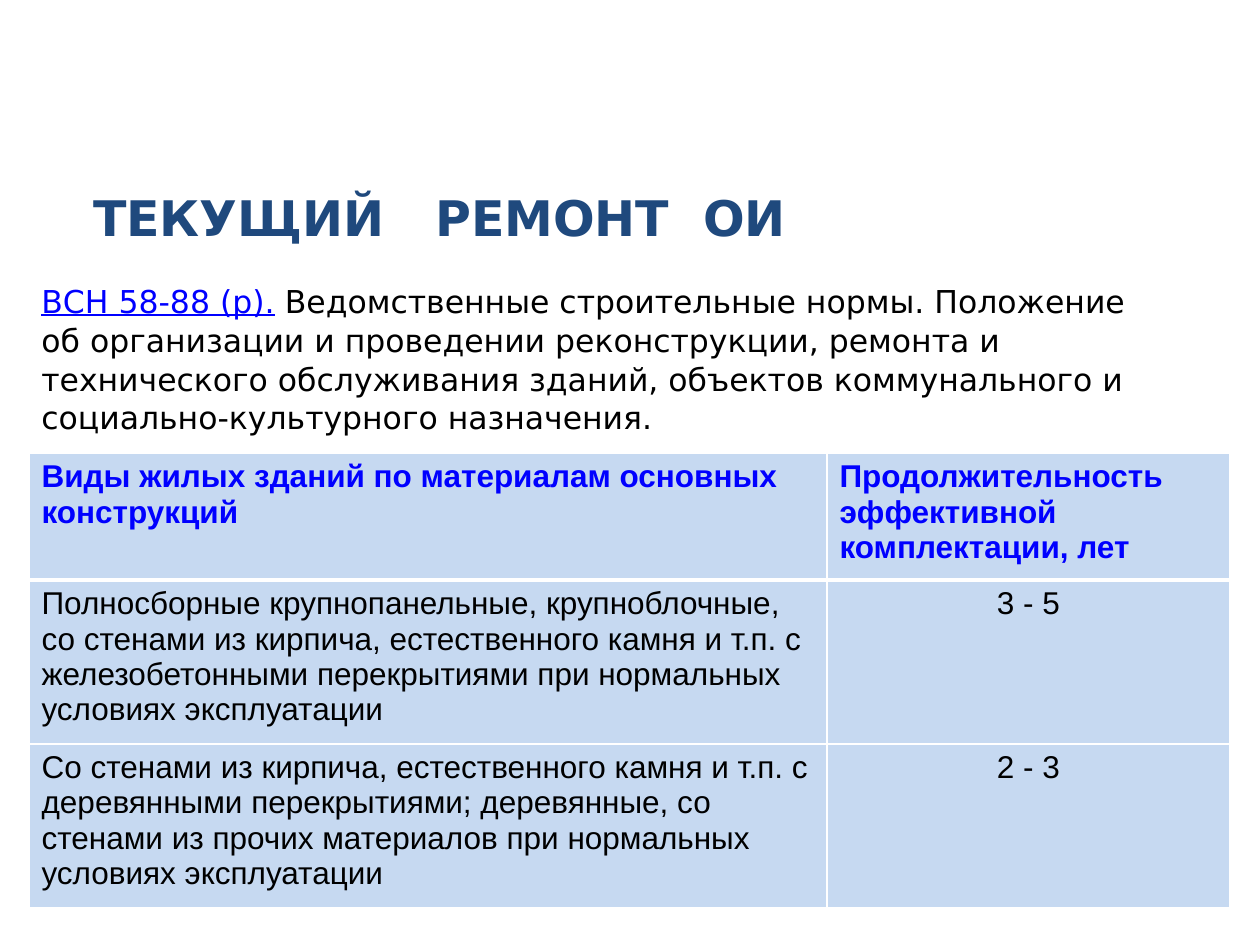
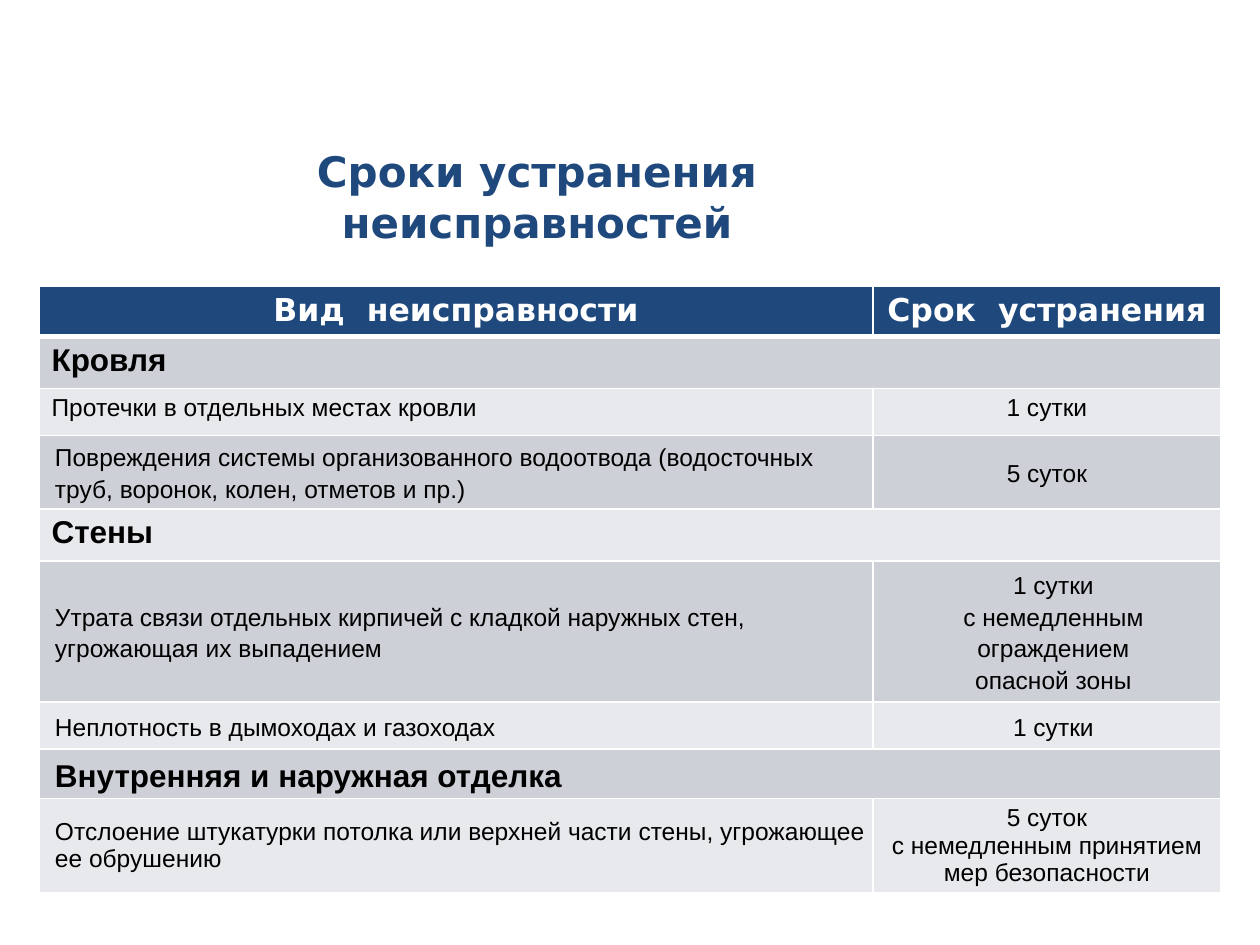
"""Build two slides on building repair: service periods and repair terms."""
from dataclasses import dataclass

from lxml import etree
from pptx import Presentation
from pptx import util as u
from pptx.dml.color import RGBColor
from pptx.enum import text
from pptx.oxml import ns


@dataclass(frozen=True)
class Theme:
    """Hold the colours, fonts and type sizes of the deck."""
    navy: str = "1F497D"
    link: str = "0000FF"
    ink: str = "000000"
    white: str = "FFFFFF"
    sky: str = "C6D9F1"
    dark: str = "CDD0D7"
    light: str = "E8E9EC"
    head: str = "DejaVu Sans"
    sans: str = "Arial"
    big: int = 28
    title: int = 24
    body: int = 18
    small: int = 14


T = Theme()
MID = text.PP_ALIGN.CENTER
LEFT = text.PP_ALIGN.LEFT
MIDDLE = text.MSO_ANCHOR.MIDDLE
TOP = text.MSO_ANCHOR.TOP


def px(n):
    """Turn px into EMU at 126 px to the inch."""
    return u.Emu(round(n * 914400 / 126))


def put(obj, fmt):
    """Set each value of a format dict on an object."""
    for key, val in fmt.items():
        setattr(obj, key, val)


def look(name, size, color, bold=False, **more):
    """Describe a type style as a dict."""
    return dict(name=name, size=u.Pt(size), color=color, bold=bold, **more)


def write(para, runs, style, align=LEFT, left=0, first=0, **fmt):
    """Fill a paragraph with runs, each a string or a (string, changes) pair."""
    props = para._p.get_or_add_pPr()
    props.set("marL", str(px(left)))
    props.set("indent", str(px(first)))
    put(para, dict(alignment=align, **fmt))
    for item in runs:
        words, change = (item, {}) if isinstance(item, str) else item
        full = {**style, **change}
        color, gap = full.pop("color"), full.pop("gap", None)
        run = para.add_run()
        run.text = words
        put(run.font, full)
        run.font.color.rgb = RGBColor.from_string(color)
        if gap:
            run._r.get_or_add_rPr().set("spc", str(gap))


def fill(frame, lines, style, **fmt):
    """Write one paragraph for each list of runs."""
    for i, runs in enumerate(lines):
        para = frame.add_paragraph() if i else frame.paragraphs[0]
        write(para, runs, style, **fmt)


def box(slide, area, lines, style, anchor=TOP, **fmt):
    """Add a wrapped text box."""
    frame = slide.shapes.add_textbox(*map(px, area)).text_frame
    put(frame, dict(word_wrap=True, vertical_anchor=anchor))
    fill(frame, lines, style, **fmt)


def title(slide, area, runs, size):
    """Add a centred slide title."""
    box(slide, area, [runs], look(T.head, size, T.navy, True), MIDDLE, align=MID)


def edge(cell, widths):
    """Draw white cell borders of the given widths in points."""
    props = cell._tc.get_or_add_tcPr()
    for side, wide in widths.items():
        line = etree.SubElement(props, ns.qn("a:ln" + side), w=str(u.Pt(wide)))
        paint = etree.SubElement(line, ns.qn("a:solidFill"))
        etree.SubElement(paint, ns.qn("a:srgbClr"), val=T.white)


def grid(slide, left, top, cols, rows, fills):
    """Add a table with white rules and one fill for each row."""
    area = map(px, (left, top, sum(cols), sum(rows)))
    table = slide.shapes.add_table(len(rows), len(cols), *area).table
    put(table, dict(first_row=False, horz_banding=False))
    for col, wide in zip(table.columns, cols):
        col.width = px(wide)
    for i, (row, high) in enumerate(zip(table.rows, rows)):
        row.height = px(high)
        for cell in row.cells:
            edge(cell, dict(L=1, R=1, T=3 if i == 1 else 1, B=1 if i else 3))
            cell.fill.solid()
            cell.fill.fore_color.rgb = RGBColor.from_string(fills[i])
    return table


def tight(cell):
    """Centre a cell's text upright and narrow its margins."""
    sides = ("left", "right", "top", "bottom")
    put(cell, {f"margin_{side}": px(3) for side in sides})
    cell.vertical_anchor = MIDDLE


def repair(slide):
    """Draw the slide on current repair."""
    title(slide, (63, 168, 753, 98),
          ["ТЕКУЩИЙ", (" ", {"gap": 1950}), "РЕМОНТ", (" ", {"gap": 975}), "ОИ"], T.big)
    link = ("ВСН 58-88 (р).", {"color": T.link, "underline": True})
    box(slide, (29, 276, 1134, 606), [
        [link, " Ведомственные строительные нормы. Положение"],
        ["об организации и проведении реконструкции, ремонта и"],
        ["технического обслуживания зданий, объектов коммунального и"],
        ["социально-культурного назначения."],
    ], look(T.head, T.body, T.ink), left=48, first=-48, space_after=u.Pt(0.5))
    rows = [
        ("Виды жилых зданий по материалам основных конструкций",
         "Продолжительность эффективной комплектации, лет"),
        ("Полносборные крупнопанельные, крупноблочные, со стенами из кирпича, "
         "естественного камня и т.п. с железобетонными перекрытиями при "
         "нормальных условиях эксплуатации", "3 - 5"),
        ("Со стенами из кирпича, естественного камня и т.п. с деревянными "
         "перекрытиями; деревянные, со стенами из прочих материалов при "
         "нормальных условиях эксплуатации", "2 - 3"),
    ]
    table = grid(slide, 29, 453, (798, 403), (127, 155, 152), [T.sky] * 3)
    for i, row in enumerate(rows):
        style = look(T.sans, T.body, T.ink if i else T.link, not i)
        for j, words in enumerate(row):
            fill(table.cell(i, j).text_frame, [[words]], style,
                 align=MID if i and j else LEFT)


def terms(slide):
    """Draw the slide on terms for mending faults."""
    title(slide, (276, 137, 522, 118), ["Сроки устранения неисправностей"], T.title)
    highs = (50, 52, 47, 70, 52, 140, 47, 48, 93)
    fills = [T.navy] + [T.dark, T.light] * 4
    table = grid(slide, 39, 286, (834, 348), highs, fills)
    wide = (" ", {"gap": 630})
    for j, pair in enumerate((("Вид", "неисправности"), ("Срок", "устранения"))):
        fill(table.cell(0, j).text_frame, [[pair[0], wide, pair[1]]],
             look(T.head, T.body, T.white, True), align=MID)
    for i, words in ((1, "Кровля"), (4, "Стены"), (7, "Внутренняя и наружная отделка")):
        cell = table.cell(i, 0)
        cell.merge(table.cell(i, 1))
        fmt = {}
        if i == 7:
            tight(cell)
            fmt = dict(left=13, line_spacing=1.15)
        fill(cell.text_frame, [[words]], look(T.sans, T.body, T.ink, True), **fmt)
    faults = [
        (2, "Протечки в отдельных местах кровли", ["1 сутки"], 0, 1),
        (3, "Повреждения системы организованного водоотвода (водосточных труб, "
            "воронок, колен, отметов и пр.)", ["5 суток"], 0, 1.15),
        (5, "Утрата связи отдельных кирпичей с кладкой наружных стен, угрожающая "
            "их выпадением",
         ["1 сутки", "с немедленным ограждением", "опасной зоны"], 13, 1.15),
        (6, "Неплотность в дымоходах и газоходах", ["1 сутки"], 13, 1.15),
        (8, "Отслоение штукатурки потолка или верхней части стены, угрожающее "
            "ее обрушению",
         ["5 суток", "с немедленным принятием мер безопасности"], 0, 1),
    ]
    style = look(T.sans, T.small, T.ink)
    for i, fault, term, left, pitch in faults:
        pair = table.cell(i, 0), table.cell(i, 1)
        if i > 2:
            for cell in pair:
                tight(cell)
        fill(pair[0].text_frame, [[fault]], style,
             left=13 if i > 2 else 0, line_spacing=pitch)
        fill(pair[1].text_frame, [[line] for line in term], style,
             align=MID, left=left, line_spacing=pitch)


def main():
    """Build and save the deck."""
    deck = Presentation()
    put(deck, dict(slide_width=px(1260), slide_height=px(945)))
    for draw in (repair, terms):
        draw(deck.slides.add_slide(deck.slide_layouts[6]))
    deck.save("out.pptx")


if __name__ == "__main__":
    main()
